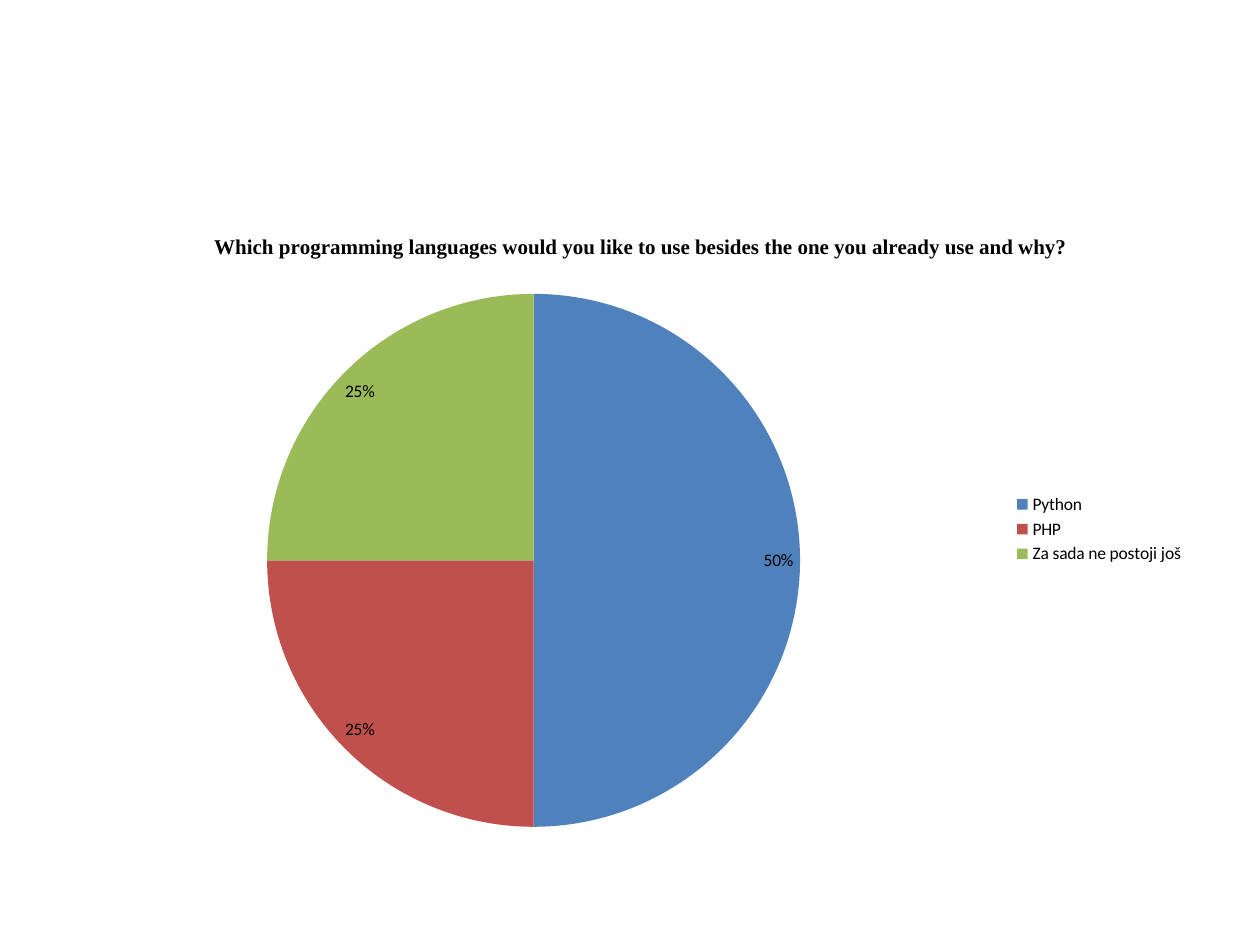
from dataclasses import dataclass
from lxml.etree import SubElement
from pptx import Presentation
from pptx.chart.data import CategoryChartData
from pptx.dml.color import RGBColor
from pptx.enum.chart import XL_CHART_TYPE, XL_LABEL_POSITION, XL_LEGEND_POSITION
from pptx.oxml.ns import qn
from pptx.util import Inches, Pt

TITLE = "Which programming languages would you like to use besides the one you already use and why?"


@dataclass
class Slice:
    """One answer, its share of the votes and its colour."""
    name: str
    share: float
    fill: str


SLICES = [
    Slice("Python", 0.5, "4F81BD"),
    Slice("PHP", 0.25, "C0504D"),
    Slice("Za sada ne postoji još", 0.25, "9BBB59"),
]


def color(code: str) -> RGBColor:
    """Turn a hex string into a colour."""
    return RGBColor.from_string(code)


def style(font, size: float, face: str = "Calibri", bold: bool = False) -> None:
    """Set the size, face and weight of black text."""
    font.size, font.name, font.bold = Pt(size), face, bold
    font.color.rgb = color("000000")


def place(part, index: int, **shares: float) -> None:
    """Fix a chart part at shares of the chart's size."""
    layout = part.find(qn("c:layout"))
    if layout is None:
        layout = SubElement(part, qn("c:layout"))
        part.insert(index, layout)
    manual = SubElement(layout, qn("c:manualLayout"))
    if "w" in shares:
        SubElement(manual, qn("c:layoutTarget")).set("val", "inner")
    for axis in "xy":
        SubElement(manual, qn(f"c:{axis}Mode")).set("val", "edge")
    for key, share in shares.items():
        SubElement(manual, qn(f"c:{key}")).set("val", str(share))


def add_title(chart) -> None:
    """Write the question above the pie."""
    chart.has_title = True
    title = chart.chart_title
    run = title.text_frame.paragraphs[0].add_run()
    run.text = TITLE
    style(run.font, 12, "Times New Roman", True)
    place(title._element, 1, x=0.13, y=0.02)


def add_legend(chart) -> None:
    """List the answers at the right."""
    chart.has_legend = True
    chart.legend.position = XL_LEGEND_POSITION.RIGHT
    chart.legend.include_in_layout = False
    style(chart.legend.font, 10)


def add_pie(slide, wide: int, high: int) -> None:
    """Draw the pie of answers with its labels."""
    data = CategoryChartData(number_format="0%")
    data.categories = [item.name for item in SLICES]
    data.add_series("Series 1", [item.share for item in SLICES])
    chart = slide.shapes.add_chart(
        XL_CHART_TYPE.PIE, int(wide * 0.05), int(high * 0.23),
        int(wide * 0.9), int(high * 0.66), data).chart
    style(chart.font, 10)
    add_title(chart)
    add_legend(chart)
    plot = chart.plots[0]
    plot.vary_by_categories = True
    for index, item in enumerate(SLICES):
        fill = plot.series[0].points[index].format.fill
        fill.solid()
        fill.fore_color.rgb = color(item.fill)
    labels = plot.series[0].data_labels
    labels.show_value = True
    labels.number_format, labels.number_format_is_linked = "0%", False
    labels.position = XL_LABEL_POSITION.BEST_FIT
    style(labels.font, 10)
    area = chart._chartSpace.find(".//" + qn("c:plotArea"))
    place(area, 0, x=0.18, y=0.12, w=0.47, h=0.86)


def main() -> None:
    """Build and save the slide."""
    deck = Presentation()
    deck.slide_width, deck.slide_height = Inches(10), Inches(7.5)
    slide = deck.slides.add_slide(deck.slide_layouts[6])
    add_pie(slide, deck.slide_width, deck.slide_height)
    deck.save("out.pptx")


if __name__ == "__main__":
    main()
